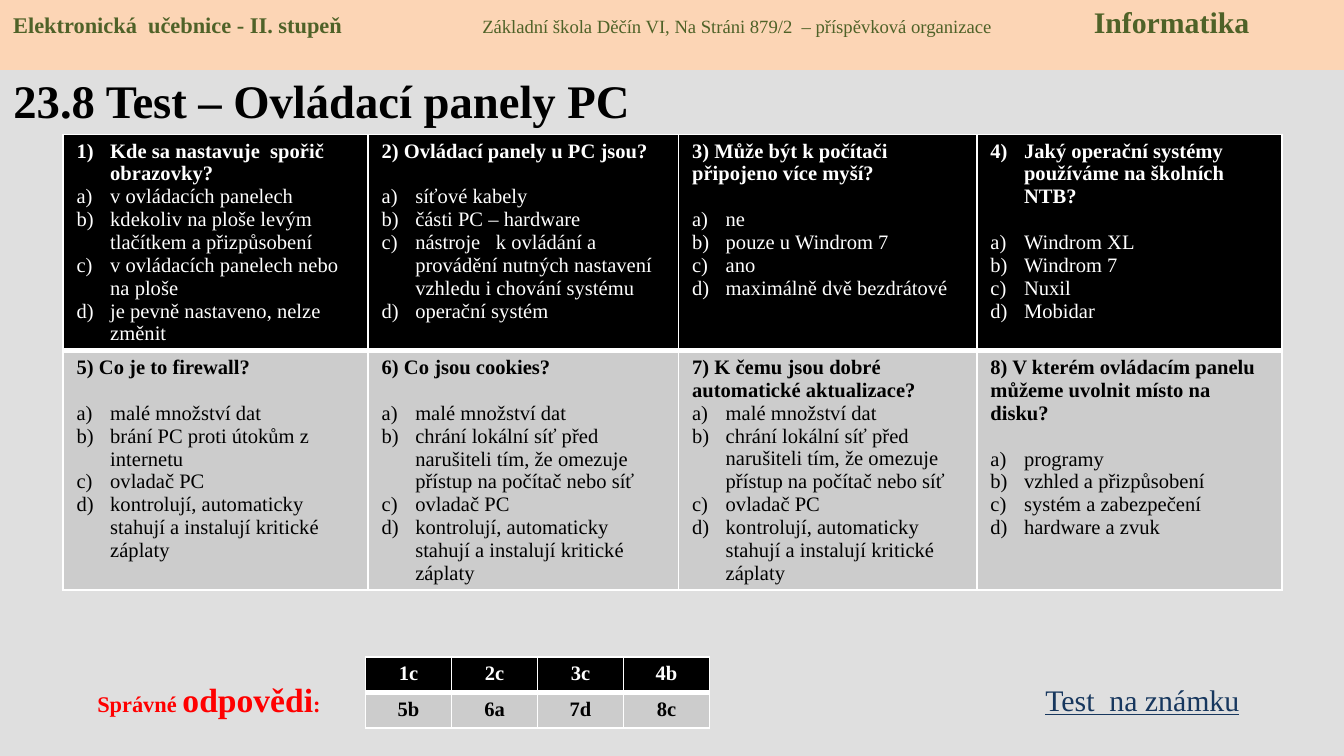
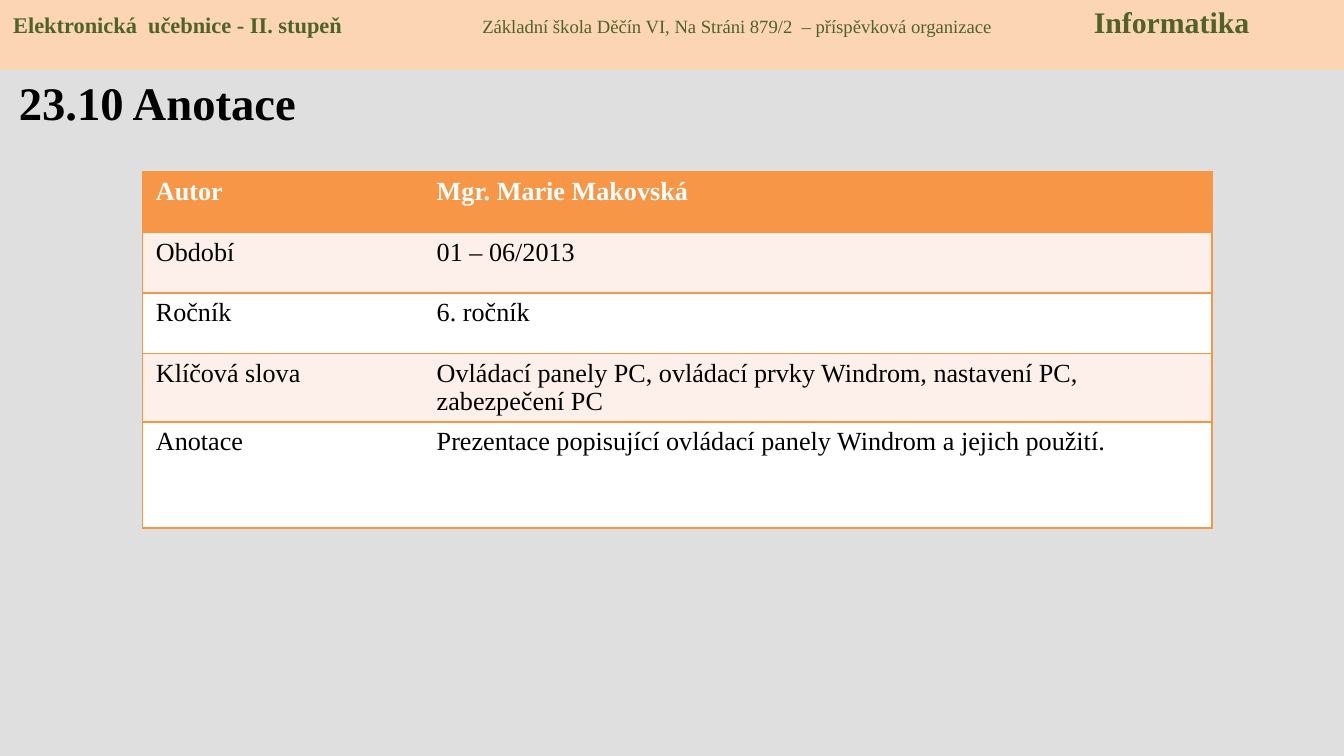
from lxml import etree
from pptx import Presentation
from pptx.dml.color import RGBColor
from pptx.enum.shapes import MSO_SHAPE
from pptx.enum.text import MSO_ANCHOR, MSO_AUTO_SIZE, PP_ALIGN
from pptx.oxml.ns import qn
from pptx.util import Inches, Pt

RECT = MSO_SHAPE.RECTANGLE
TOP, MIDDLE = MSO_ANCHOR.TOP, MSO_ANCHOR.MIDDLE
NO_FIT = MSO_AUTO_SIZE.NONE
LEFT, CENTER = PP_ALIGN.LEFT, PP_ALIGN.CENTER

FONT = "Times New Roman"
BLACK = RGBColor(0x00, 0x00, 0x00)
WHITE = RGBColor(0xFF, 0xFF, 0xFF)
PAPER = RGBColor(0xDF, 0xDF, 0xDF)
GREY = RGBColor(0xCC, 0xCC, 0xCC)
PEACH = RGBColor(0xFC, 0xD5, 0xB5)
GREEN = RGBColor(0x4F, 0x62, 0x28)
RED = RGBColor(0xFF, 0x00, 0x00)
NAVY = RGBColor(0x17, 0x37, 0x5E)
ORANGE = RGBColor(0xF7, 0x96, 0x46)
BLUSH = RGBColor(0xFD, 0xEF, 0xE9)

BAND = [("Elektronická  učebnice - II. stupeň", 12, True),
        ("\tZákladní škola Děčín VI, Na Stráni 879/2  – příspěvková organizace", 10, False),
        ("\tInformatika", 16, True)]
BAND_TABS = (3.49, 8.04)

DATA = "malé množství dat"
NETWORK = "chrání lokální síť před narušiteli tím, že omezuje přístup na počítač nebo síť"
DRIVER = "ovladač PC"
PATCHES = "kontrolují, automaticky stahují a instalují kritické záplaty"

QUESTIONS = [
    [("Kde sa nastavuje  spořič obrazovky?", 1, False,
      ["v ovládacích panelech", "kdekoliv na ploše levým tlačítkem a přizpůsobení",
       "v ovládacích panelech nebo na ploše", "je pevně nastaveno, nelze změnit"]),
     ("2) Ovládací panely u PC jsou?", None, True,
      ["síťové kabely", "části PC – hardware",
       "nástroje   k ovládání a provádění nutných nastavení vzhledu i chování systému",
       "operační systém"]),
     ("3) Může být k počítači připojeno více myší?", None, True,
      ["ne", "pouze u Windrom 7", "ano", "maximálně dvě bezdrátové"]),
     ("Jaký operační systémy používáme na školních NTB?", 4, True,
      ["Windrom XL", "Windrom 7", "Nuxil", "Mobidar"])],
    [("5) Co je to firewall?", None, True,
      [DATA, "brání PC proti útokům z internetu", DRIVER, PATCHES]),
     ("6) Co jsou cookies?", None, True, [DATA, NETWORK, DRIVER, PATCHES]),
     ("7) K čemu jsou dobré automatické aktualizace?", None, False,
      [DATA, NETWORK, DRIVER, PATCHES]),
     ("8) V kterém ovládacím panelu můžeme uvolnit místo na disku?", None, True,
      ["programy", "vzhled a přizpůsobení", "systém a zabezpečení", "hardware a zvuk"])],
]
KEY = [["1c", "2c", "3c", "4b"], ["5b", "6a", "7d", "8c"]]
KEY_LABEL = [("Správné ", 12), ("odpovědi", 18), (":", 12)]
ANNOTATION = [
    ("Autor", "Mgr. Marie Makovská"),
    ("Období", "01 – 06/2013"),
    ("Ročník", "6. ročník"),
    ("Klíčová slova", "Ovládací panely PC, ovládací prvky Windrom, nastavení PC, zabezpečení PC"),
    ("Anotace", "Prezentace popisující ovládací panely Windrom a jejich použití."),
]


def style(font, size, color, bold=False):
    font.name, font.size, font.bold = FONT, Pt(size), bold
    font.color.rgb = color


def write(p, text, size, color, bold=False, align=LEFT):
    p.add_run().text = text
    p.alignment = align
    style(p.font, size, color, bold)


def write_runs(p, runs, color, align=LEFT):
    p.alignment = align
    for text, size, bold in runs:
        r = p.add_run()
        r.text = text
        style(r.font, size, color, bold)


def number(p, scheme, start=1):
    pPr = p._p.get_or_add_pPr()
    pPr.set("marL", str(Inches(0.25)))
    pPr.set("indent", str(-Inches(0.25)))
    bullet = etree.Element(qn("a:buAutoNum"), type=scheme)
    if start > 1:
        bullet.set("startAt", str(start))
    pPr.insert_element_before(bullet, "a:tabLst", "a:defRPr", "a:extLst")


def set_borders(cell, color, widths):
    tcPr = cell._tc.get_or_add_tcPr()
    for side, width in zip("LRTB", widths):
        ln = etree.SubElement(tcPr, qn(f"a:ln{side}"), w=str(Pt(width)))
        if width:
            fill = etree.SubElement(ln, qn("a:solidFill"))
            etree.SubElement(fill, qn("a:srgbClr"), val=str(color))
        else:
            etree.SubElement(ln, qn("a:noFill"))


def paint(cell, color):
    cell.fill.solid()
    cell.fill.fore_color.rgb = color
    cell.margin_left = cell.margin_right = Inches(0.1)
    cell.margin_top = cell.margin_bottom = Inches(0.04)


def add_grid(s, x, y, cols, rows):
    table = s.shapes.add_table(len(rows), len(cols), Inches(x), Inches(y),
                               Inches(sum(cols)), Inches(sum(rows))).table
    for col, width in zip(table.columns, cols):
        col.width = Inches(width)
    for row, height in zip(table.rows, rows):
        row.height = Inches(height)
    return table


def add_dark_grid(s, x, y, cols, rows, content, fill_cell):
    table = add_grid(s, x, y, cols, rows)
    for i, row in enumerate(content):
        for j, item in enumerate(row):
            cell = table.cell(i, j)
            set_borders(cell, WHITE, (1, 1, 1, 3) if i == 0 else (1, 1, 3, 1))
            paint(cell, GREY if i else BLACK)
            fill_cell(cell.text_frame, item, BLACK if i else WHITE)


def fill_question(tf, item, color):
    question, start, gap, answers = item
    p = tf.paragraphs[0]
    write(p, question, 11, color, True)
    if start:
        number(p, "arabicParenR", start)
    for i, answer in enumerate(answers):
        p = tf.add_paragraph()
        write(p, answer, 11, color)
        if gap and i == 0:
            p.space_before = Pt(12.3)
        number(p, "alphaLcParenR")


def fill_key(tf, item, color):
    write(tf.paragraphs[0], item, 11, color, True, CENTER)


def add_text(s, x, y, w, h):
    tf = s.shapes.add_textbox(Inches(x), Inches(y), Inches(w), Inches(h)).text_frame
    tf.word_wrap = True
    return tf.paragraphs[0]


def add_band(s):
    sp = s.shapes.add_shape(RECT, 0, Inches(-0.02), Inches(10), Inches(0.54))
    sp.shadow.inherit = False
    sp.fill.solid()
    sp.fill.fore_color.rgb = PEACH
    sp.line.fill.background()
    tf = sp.text_frame
    tf.word_wrap = True
    tf.vertical_anchor = TOP
    p = tf.paragraphs[0]
    tabs = etree.SubElement(p._p.get_or_add_pPr(), qn("a:tabLst"))
    for pos in BAND_TABS:
        etree.SubElement(tabs, qn("a:tab"), pos=str(Inches(pos)), algn="l")
    write_runs(p, BAND, GREEN)


def add_slide(prs, title, x, y, w, h, anchor):
    s = prs.slides.add_slide(prs.slide_layouts[5])
    sp = s.shapes.title
    sp.left, sp.top, sp.width, sp.height = Inches(x), Inches(y), Inches(w), Inches(h)
    tf = sp.text_frame
    tf.auto_size = NO_FIT
    tf.word_wrap = True
    tf.vertical_anchor = anchor
    write(tf.paragraphs[0], title, 25, BLACK, True)
    return s


def build_test(prs):
    s = add_slide(prs, "23.8 Test – Ovládací panely PC", 0, 0.27, 9, 0.94, MIDDLE)
    add_dark_grid(s, 0.47, 1, (2.27, 2.31, 2.22, 2.27), (1.57, 1.57), QUESTIONS, fill_question)
    p = add_text(s, 0.39, 5, 2.33, 0.4)
    write_runs(p, [(text, size, True) for text, size in KEY_LABEL], RED, CENTER)
    p = add_text(s, 7.68, 5.02, 1.89, 0.37)
    write(p, "Test  na známku", 16, NAVY)
    p.font.underline = True
    add_dark_grid(s, 2.72, 4.89, [0.64] * 4, [0.25] * 2, KEY, fill_key)
    add_band(s)


def build_annotation(prs):
    s = add_slide(prs, "23.10 Anotace", 0.04, 0.5, 3.19, 0.49, TOP)
    table = add_grid(s, 1.06, 1.28, (2.09, 5.87), [0.45] * 4 + [0.79])
    for i, row in enumerate(ANNOTATION):
        fill = ORANGE if i == 0 else (WHITE, BLUSH)[i % 2]
        for j, text in enumerate(row):
            cell = table.cell(i, j)
            set_borders(cell, ORANGE, (1 - j, j, 1, 1))
            paint(cell, fill)
            write(cell.text_frame.paragraphs[0], text, 14, BLACK if i else WHITE, i == 0)
    add_band(s)


def main():
    prs = Presentation()
    prs.slide_width = Inches(10)
    prs.slide_height = prs.slide_width * 9 // 16
    background = prs.slide_master.background.fill
    background.solid()
    background.fore_color.rgb = PAPER
    build_test(prs)
    build_annotation(prs)
    prs.save("out.pptx")


if __name__ == "__main__":
    main()
